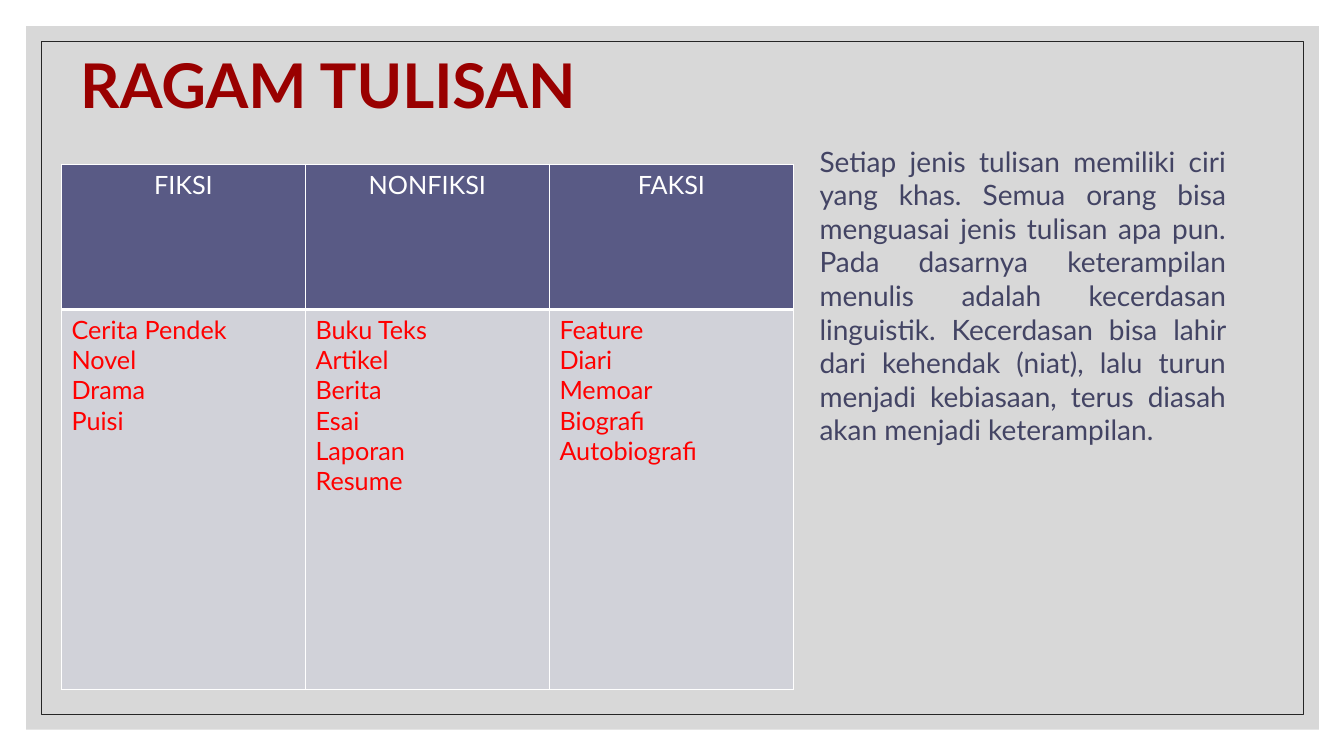
import pptx
import pptx.util
import pptx.oxml
import pptx.oxml.ns
import pptx.dml.color
import pptx.enum.shapes
import pptx.enum.text
import lxml.etree

Inches = pptx.util.Inches
Pt = pptx.util.Pt
RGBColor = pptx.dml.color.RGBColor
ALIGN = pptx.enum.text.PP_ALIGN
qn = pptx.oxml.ns.qn

FONT = "Lato"
WHITE = RGBColor(0xFF, 0xFF, 0xFF)
GREY = RGBColor(0xBF, 0xBF, 0xBF)
INK = RGBColor(0x26, 0x26, 0x26)
MAROON = RGBColor(0x99, 0x00, 0x00)
RED = RGBColor(0xFF, 0x00, 0x00)
HEAD = RGBColor(0x59, 0x5A, 0x85)
PALE = RGBColor(0xD1, 0xD2, 0xD9)
NAVY = RGBColor(0x43, 0x44, 0x64)

KINDS = {
    "FIKSI": ["Cerita Pendek", "Novel", "Drama", "Puisi"],
    "NONFIKSI": ["Buku Teks", "Artikel", "Berita", "Esai", "Laporan", "Resume"],
    "FAKSI": ["Feature", "Diari", "Memoar", "Biografi", "Autobiografi"],
}
NOTE = (
    "Setiap jenis tulisan memiliki ciri yang khas. Semua orang bisa menguasai "
    "jenis tulisan apa pun. Pada dasarnya keterampilan menulis adalah kecerdasan "
    "linguistik. Kecerdasan bisa lahir dari kehendak (niat), lalu turun menjadi "
    "kebiasaan, terus diasah akan menjadi keterampilan."
)


def style(frame, size, color, align, bold=False):
    for para in frame.paragraphs:
        para.alignment = align
        for run in para.runs:
            run.font.name = FONT
            run.font.size = Pt(size)
            run.font.bold = bold
            run.font.color.rgb = color


def add_text(slide, box, text, size, color, align, bold=False):
    frame = slide.shapes.add_textbox(*map(Inches, box)).text_frame
    frame.word_wrap = True
    frame.text = text
    style(frame, size, color, align, bold)


def add_frame(slide, box):
    left, top, width, height = box
    rect = pptx.enum.shapes.MSO_SHAPE.RECTANGLE
    panel = slide.shapes.add_shape(rect, *map(Inches, box))
    panel.shadow.inherit = False
    panel.fill.solid()
    panel.fill.fore_color.rgb = GREY
    panel.line.fill.background()
    shade = panel.fill._xPr.find(".//" + qn("a:srgbClr"))
    lxml.etree.SubElement(shade, qn("a:alpha"), val="60000")

    gap = 0.15
    inner = (left + gap, top + gap, width - 2 * gap, height - 2 * gap)
    edge = slide.shapes.add_shape(rect, *map(Inches, inner))
    edge.shadow.inherit = False
    edge.fill.background()
    edge.line.color.rgb = INK
    edge.line.width = Pt(0.5)


def add_edges(cell, widths):
    props = cell._tc.get_or_add_tcPr()
    for side, width in widths.items():
        line = lxml.etree.SubElement(props, qn("a:ln" + side), w=str(Pt(width)))
        fill = lxml.etree.SubElement(line, qn("a:solidFill"))
        lxml.etree.SubElement(fill, qn("a:srgbClr"), val=str(WHITE))


def fill_cell(cell, text, color, back, align, widths):
    cell.text_frame.text = text
    style(cell.text_frame, 18, color, align)
    add_edges(cell, widths)
    cell.fill.solid()
    cell.fill.fore_color.rgb = back


def add_kinds(slide, box, top_row):
    height = box[3]
    table = slide.shapes.add_table(2, len(KINDS), *map(Inches, box)).table
    table.rows[0].height = Inches(top_row)
    table.rows[1].height = Inches(height - top_row)
    for col, (kind, items) in enumerate(KINDS.items()):
        fill_cell(table.cell(0, col), kind, WHITE, HEAD, ALIGN.CENTER,
                  {"L": 1, "R": 1, "T": 1, "B": 3})
        fill_cell(table.cell(1, col), "\n".join(items), RED, PALE, ALIGN.LEFT,
                  {"L": 1, "R": 1, "T": 3, "B": 1})


def main():
    deck = pptx.Presentation()
    deck.slide_width = Inches(13.33)
    deck.slide_height = Inches(7.5)
    slide = deck.slides.add_slide(deck.slide_layouts[6])
    add_frame(slide, (0.26, 0.26, 12.82, 6.98))
    add_text(slide, (-0.83, 0.42, 8.17, 1.25), "RAGAM TULISAN", 44, MAROON,
             ALIGN.CENTER, True)
    add_kinds(slide, (0.61, 1.63, 7.26, 5.21), 1.44)
    add_text(slide, (8.03, 1.38, 4.23, 3.8), NOTE, 20, NAVY, ALIGN.JUSTIFY)
    deck.save("out.pptx")


if __name__ == "__main__":
    main()
